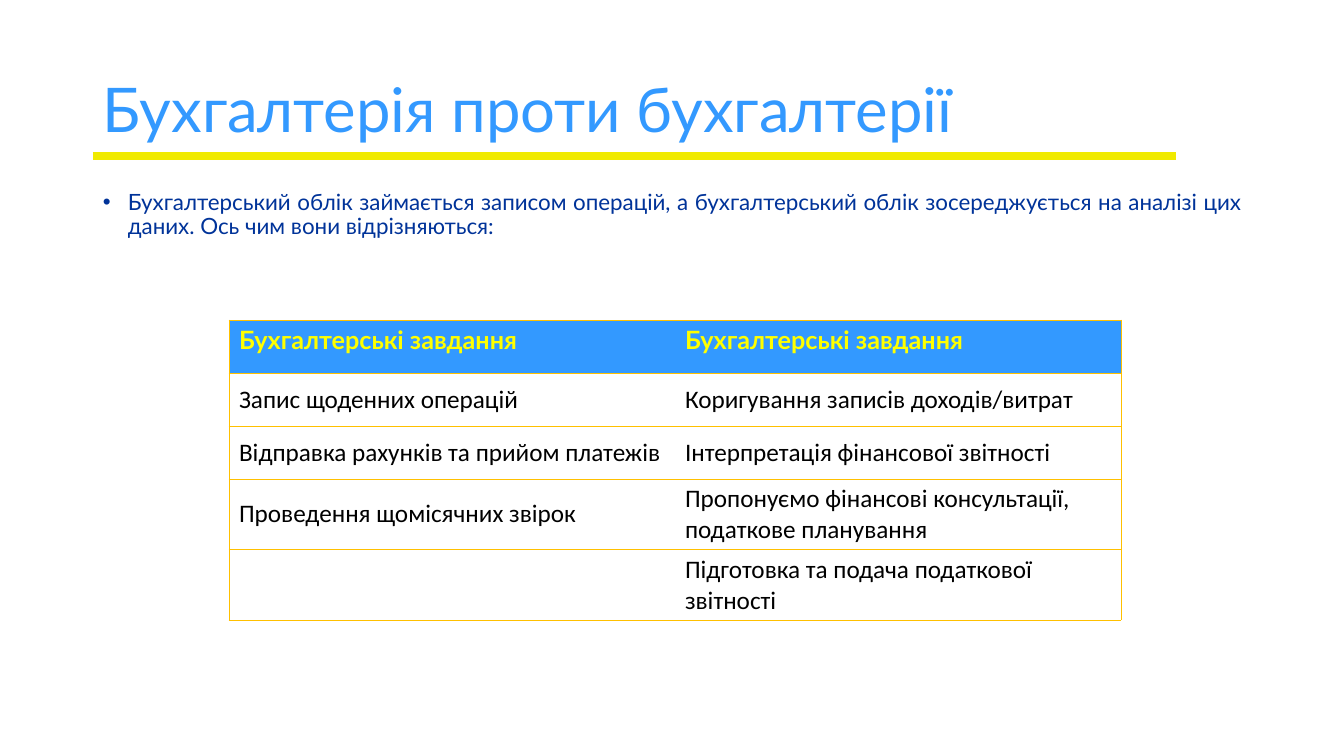
from lxml.etree import SubElement
from pptx import Presentation
from pptx.dml.color import RGBColor
from pptx.enum.shapes import MSO_CONNECTOR
from pptx.enum.text import MSO_ANCHOR as Anchor, PP_ALIGN as Align
from pptx.oxml.ns import qn
from pptx.util import Emu, Pt

TITLE = "Бухгалтерія проти бухгалтерії"
INTRO = ("Бухгалтерський облік займається записом операцій, а бухгалтерський облік "
         "зосереджується на аналізі цих даних. Ось чим вони відрізняються:")
TASKS = [
    ("Бухгалтерські завдання", "Бухгалтерські завдання"),
    ("Запис щоденних операцій", "Коригування записів доходів/витрат"),
    ("Відправка рахунків та прийом платежів", "Інтерпретація фінансової звітності"),
    ("Проведення щомісячних звірок", "Пропонуємо фінансові консультації, податкове планування"),
    ("", "Підготовка та подача податкової звітності"),
]
COLORS = {"sky": "3399FF", "navy": "003399", "lemon": "F0EA00",
          "yellow": "FFFF00", "gold": "FFC000", "black": "000000"}

SLIDE_W, SLIDE_H = 1344, 756
LEFT, TEXT_W = 93, 1159
TITLE_TOP, TITLE_H = 40, 146
RULE_Y, RULE_END = 156, 1176
INTRO_TOP, INTRO_H = 186, 480
BULLET_INDENT = 25
TABLE_LEFT, TABLE_TOP = 229, 320
COL_W, ROW_H = 446, 53

TITLE_FONT = {"name": "Lato", "size": Pt(44), "color": "sky"}
INTRO_FONT = {"name": "Lato", "size": Pt(16), "color": "navy"}
HEAD_FONT = {"name": "Lato", "size": Pt(18), "bold": True, "color": "yellow"}
CELL_FONT = {"name": "Calibri", "size": Pt(18), "bold": False, "color": "black"}


def px(length):
    return Emu(round(length * 914400 / 100.8))


def rgb(name):
    return RGBColor.from_string(COLORS[name])


def style_font(font, formats):
    for key, value in formats.items():
        if key == "color":
            font.color.rgb = rgb(value)
        else:
            setattr(font, key, value)


def add_text(page, top, height, text, formats, anchor, align):
    box = page.shapes.add_textbox(px(LEFT), px(top), px(TEXT_W), px(height))
    box.text_frame.word_wrap = True
    box.text_frame.vertical_anchor = anchor
    para = box.text_frame.paragraphs[0]
    para.alignment = align
    para.line_spacing = 0.9
    span = para.add_run()
    span.text = text
    style_font(span.font, formats)
    return para


def add_bullet(para):
    props = para._p.get_or_add_pPr()
    props.set("marL", str(px(BULLET_INDENT)))
    props.set("indent", str(-px(BULLET_INDENT)))
    SubElement(props, qn("a:buFont"), typeface="Arial")
    SubElement(props, qn("a:buChar"), char="•")


def set_borders(cell, edges):
    """Draw the sides marked True in gold and leave the others empty."""
    props = cell._tc.get_or_add_tcPr()
    for place, (side, visible) in enumerate(edges.items()):
        line = SubElement(props, qn(f"a:ln{side}"), w=str(Pt(0.5)))
        if visible:
            fill = SubElement(line, qn("a:solidFill"))
            SubElement(fill, qn("a:srgbClr"), val=COLORS["gold"])
        else:
            SubElement(line, qn("a:noFill"))
        props.insert(place, line)


def add_rule(page):
    rule = page.shapes.add_connector(MSO_CONNECTOR.STRAIGHT, px(LEFT), px(RULE_Y),
                                     px(RULE_END), px(RULE_Y))
    rule.line.color.rgb = rgb("lemon")
    rule.line.width = Pt(6)
    SubElement(rule._element.spPr, qn("a:effectLst"))


def add_task_table(page):
    rows, cols = len(TASKS), len(TASKS[0])
    table = page.shapes.add_table(rows, cols, px(TABLE_LEFT), px(TABLE_TOP),
                                  px(COL_W * cols), px(ROW_H * rows)).table
    table.first_row = table.horz_banding = False
    for column in table.columns:
        column.width = px(COL_W)
    for r, tasks in enumerate(TASKS):
        table.rows[r].height = px(ROW_H)
        for c, task in enumerate(tasks):
            cell = table.cell(r, c)
            cell.text = task
            style_font(cell.text_frame.paragraphs[0].font, CELL_FONT if r else HEAD_FONT)
            cell.vertical_anchor = Anchor.MIDDLE if r else Anchor.TOP
            if r:
                cell.fill.background()
            else:
                cell.fill.solid()
                cell.fill.fore_color.rgb = rgb("sky")
            set_borders(cell, {"L": c == 0, "R": c == cols - 1, "T": True, "B": True})


def main():
    deck = Presentation()
    deck.slide_width, deck.slide_height = px(SLIDE_W), px(SLIDE_H)
    page = deck.slides.add_slide(deck.slide_layouts[6])
    add_rule(page)
    add_text(page, TITLE_TOP, TITLE_H, TITLE, TITLE_FONT, Anchor.MIDDLE, Align.LEFT)
    intro = add_text(page, INTRO_TOP, INTRO_H, INTRO, INTRO_FONT, Anchor.TOP, Align.JUSTIFY)
    add_bullet(intro)
    add_task_table(page)
    deck.save("out.pptx")


if __name__ == "__main__":
    main()
